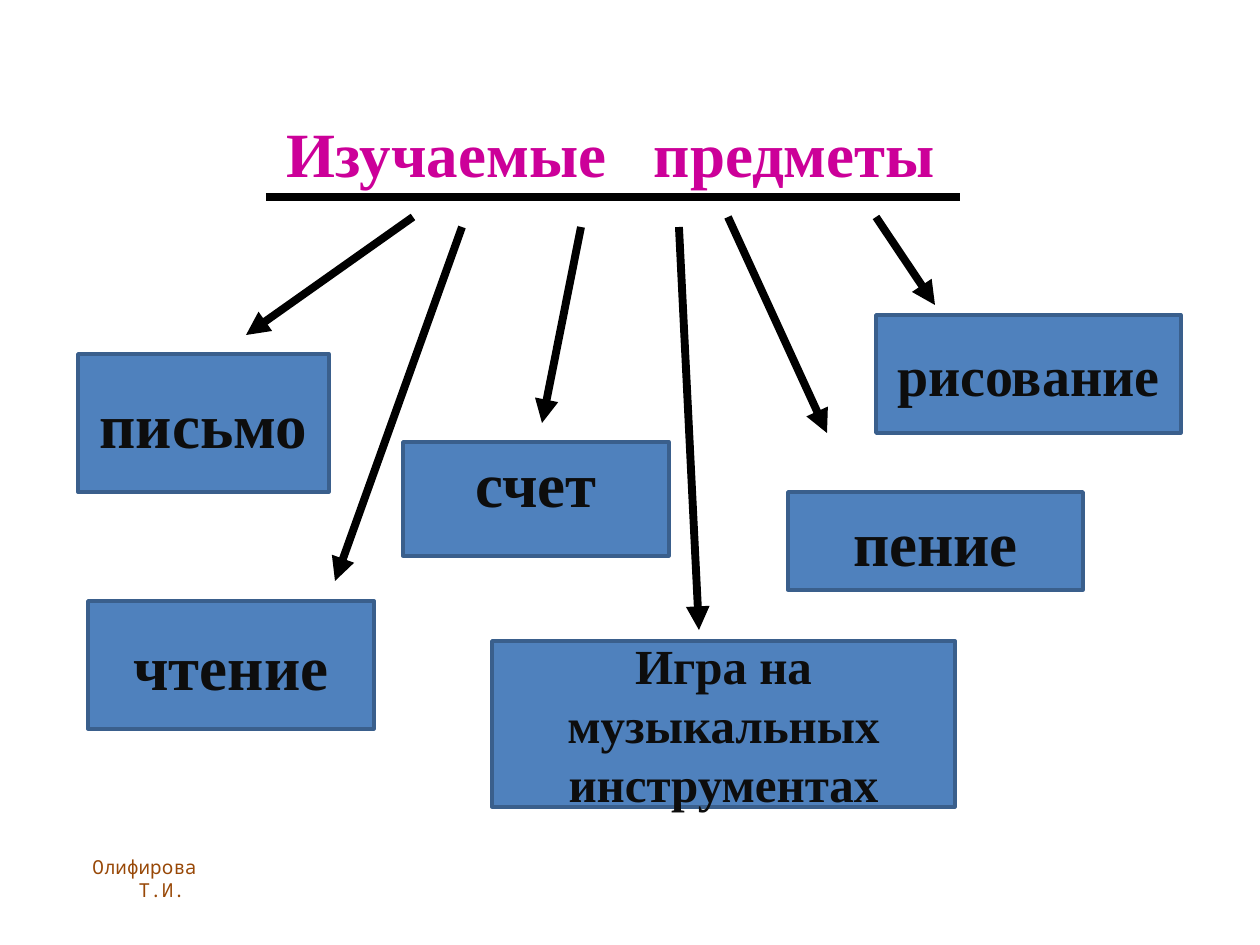
import pptx
import pptx.util
import pptx.dml.color
import pptx.enum.shapes
import pptx.enum.text
import pptx.oxml
import pptx.oxml.ns

RGB = pptx.dml.color.RGBColor
BLUE = RGB(0x4F, 0x81, 0xBD)
DARK_BLUE = RGB(0x3A, 0x5F, 0x8C)
INK = RGB(0x0D, 0x0D, 0x0D)
BLACK = RGB(0, 0, 0)
MAGENTA = RGB(0xCC, 0x00, 0x99)
BROWN = RGB(0x98, 0x48, 0x07)
SERIF = "Times New Roman"
MONO = "Noto Sans Mono"
ANCHOR = pptx.enum.text.MSO_ANCHOR
ALIGN = pptx.enum.text.PP_ALIGN

SUBJECTS = [
    ("письмо", 36, (78, 354, 251, 138)),
    ("чтение", 36, (88, 601, 286, 128)),
    ("счет", 36, (403, 442, 266, 114)),
    ("Игра на музыкальных инструментах", 28, (492, 641, 463, 166)),
    ("пение", 36, (788, 492, 295, 98)),
    ("рисование", 32, (876, 315, 305, 118)),
]
ARROWS = [
    (413, 217, 246, 335),
    (462, 227, 335, 581),
    (581, 227, 542, 423),
    (679, 227, 699, 630),
    (728, 217, 827, 433),
    (876, 217, 935, 305),
]


def px(n):
    return pptx.util.Emu(round(n * 914400 / 126))


def style(p, font, size, color, bold, align=ALIGN.CENTER):
    p.alignment = align
    p.font.name = font
    p.font.size = pptx.util.Pt(size)
    p.font.color.rgb = color
    p.font.bold = bold


def add_text(s, box):
    tf = s.shapes.add_textbox(*map(px, box)).text_frame
    tf.word_wrap = True
    return tf.paragraphs[0]


def add_title(s):
    p = add_text(s, (168, 108, 886, 89))
    for text in ("Изучаемые", " ", "предметы"):
        r = p.add_run()
        r.text = text
        if text == " ":
            r._r.get_or_add_rPr().set("spc", "1800")
    style(p, SERIF, 36, MAGENTA, True)


def add_author(s):
    p = add_text(s, (25, 849, 184, 37))
    p.text = "Олифирова Т.И. "
    style(p, MONO, 11, BROWN, False, ALIGN.RIGHT)


def add_subject(s, text, size, box):
    sp = s.shapes.add_shape(pptx.enum.shapes.MSO_SHAPE.RECTANGLE, *map(px, box))
    sp.shadow.inherit = False
    sp.fill.solid()
    sp.fill.fore_color.rgb = BLUE
    sp.line.color.rgb = DARK_BLUE
    sp.line.width = pptx.util.Pt(2)
    tf = sp.text_frame
    tf.word_wrap = True
    tf.vertical_anchor = ANCHOR.MIDDLE
    p = tf.paragraphs[0]
    p.text = text
    style(p, SERIF, size, INK, True)
    return tf


def add_line(s, ends, arrow=False):
    c = s.shapes.add_connector(pptx.enum.shapes.MSO_CONNECTOR.STRAIGHT, *map(px, ends))
    c.line.color.rgb = BLACK
    c.line.width = pptx.util.Pt(4.5)
    if arrow:
        tail = pptx.oxml.parse_xml(
            f'<a:tailEnd {pptx.oxml.ns.nsdecls("a")} type="triangle"/>')
        c.line._get_or_add_ln().append(tail)
    c._element.spPr.append(
        pptx.oxml.parse_xml(f'<a:effectLst {pptx.oxml.ns.nsdecls("a")}/>'))


def main():
    prs = pptx.Presentation()
    prs.slide_width = px(1260)
    prs.slide_height = px(945)
    s = prs.slides.add_slide(prs.slide_layouts[6])
    add_author(s)
    add_title(s)
    add_line(s, (266, 197, 960, 197))
    for ends in ARROWS:
        add_line(s, ends, arrow=True)
    frames = {text: add_subject(s, text, size, box) for text, size, box in SUBJECTS}
    counting = frames["счет"]
    counting.vertical_anchor = ANCHOR.TOP
    counting.margin_top = px(3)
    prs.save("out.pptx")


if __name__ == "__main__":
    main()
